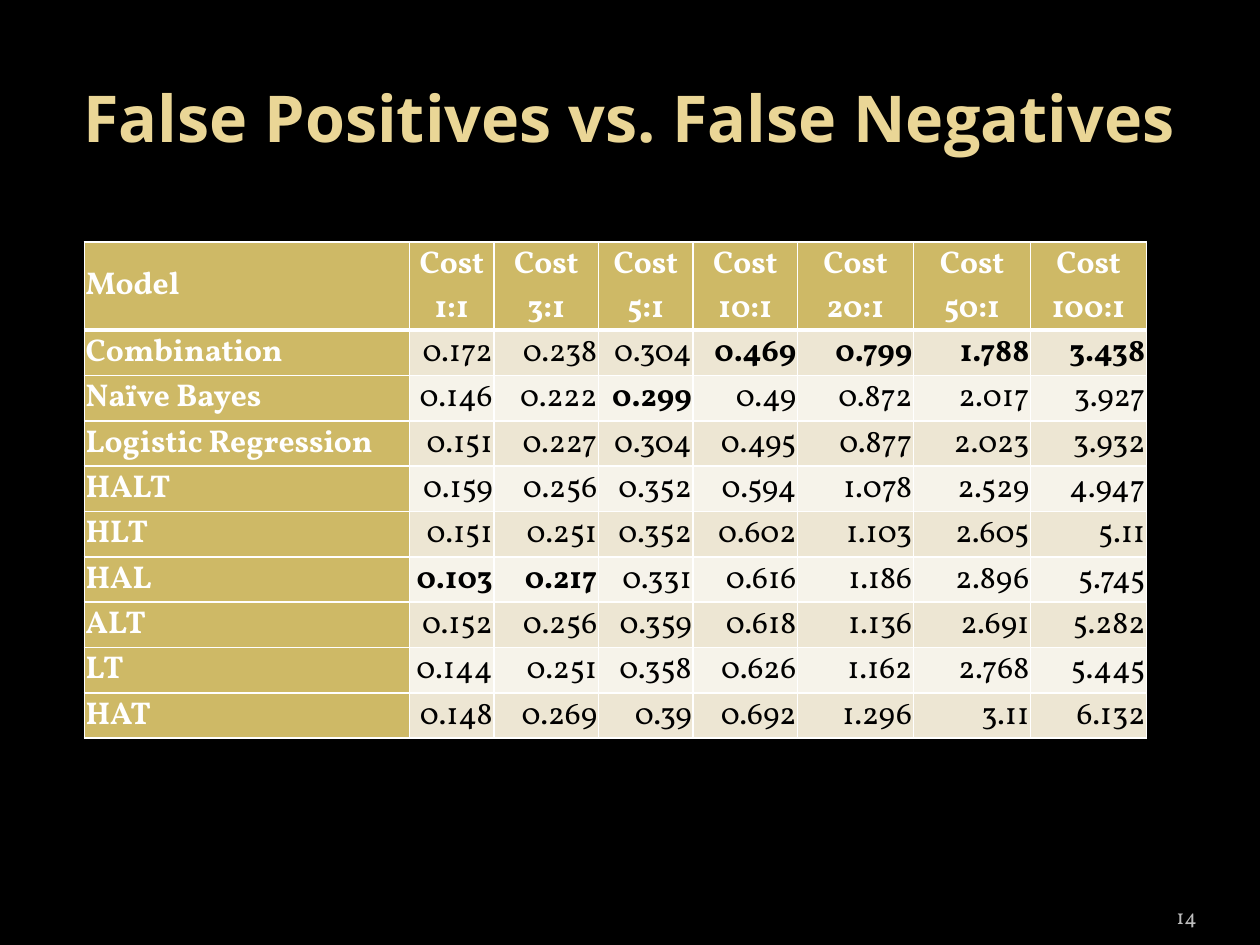
import lxml.etree
import pptx
import pptx.dml.color
import pptx.enum.text
import pptx.oxml.ns
import pptx.util

Inches, Pt = pptx.util.Inches, pptx.util.Pt
RGB = pptx.dml.color.RGBColor.from_string
ALIGN = pptx.enum.text.PP_ALIGN
ANCHOR = pptx.enum.text.MSO_ANCHOR

TITLE = "False Positives vs. False Negatives"
PAGE_NUMBER = "14"
HEADINGS = ["Model", "Cost 1:1", "Cost 3:1", "Cost 5:1", "Cost 10:1",
            "Cost 20:1", "Cost 50:1", "Cost 100:1"]
MODEL_COSTS = [
    ("Combination", 0.172, 0.238, 0.304, 0.469, 0.799, 1.788, 3.438),
    ("Naïve Bayes", 0.146, 0.222, 0.299, 0.49, 0.872, 2.017, 3.927),
    ("Logistic Regression", 0.151, 0.227, 0.304, 0.495, 0.877, 2.023, 3.932),
    ("HALT", 0.159, 0.256, 0.352, 0.594, 1.078, 2.529, 4.947),
    ("HLT", 0.151, 0.251, 0.352, 0.602, 1.103, 2.605, 5.11),
    ("HAL", 0.103, 0.217, 0.331, 0.616, 1.186, 2.896, 5.745),
    ("ALT", 0.152, 0.256, 0.359, 0.618, 1.136, 2.691, 5.282),
    ("LT", 0.144, 0.251, 0.358, 0.626, 1.162, 2.768, 5.445),
    ("HAT", 0.148, 0.269, 0.39, 0.692, 1.296, 3.11, 6.132),
]
COLUMN_WIDTHS = [2.58, 0.67, 0.83, 0.75, 0.83, 0.92, 0.93, 0.92]
ROW_HEIGHTS = [0.7] + [0.36] * len(MODEL_COSTS)

THEME = {
    "background": "000000",
    "gold": "CEB966",
    "bands": ("EDE6D3", "F6F3EA"),
    "border": "FFFFFF",
    "thin": 1,
    "thick": 3,
    "title": {"name": "Open Sans", "size": 36.9, "bold": True, "color": "EAD696"},
    "page": {"name": "Vollkorn", "size": 12, "bold": False, "color": "BDBDBD"},
    "heading": {"name": "Vollkorn", "size": 18, "bold": True, "color": "FFFFFF"},
    "cost": {"name": "Vollkorn", "size": 18, "bold": False, "color": "000000"},
}
CELL_MARGINS = {"margin_left": 0.01, "margin_top": 0.01,
                "margin_right": 0.01, "margin_bottom": 0}


def write(frame, text, style, alignment):
    paragraph = frame.paragraphs[0]
    paragraph.alignment = alignment
    run = paragraph.add_run()
    run.text = text
    formats = {"name": style["name"], "size": Pt(style["size"]), "bold": style["bold"]}
    for attribute, value in formats.items():
        setattr(run.font, attribute, value)
    run.font.color.rgb = RGB(style["color"])


def add_text(slide, box, text, style, alignment, anchor, side_margin):
    frame = slide.shapes.add_textbox(*map(Inches, box)).text_frame
    formats = {"word_wrap": True, "vertical_anchor": anchor,
               "margin_left": Inches(side_margin), "margin_right": Inches(side_margin)}
    for attribute, value in formats.items():
        setattr(frame, attribute, value)
    write(frame, text, style, alignment)


def add_borders(cell, widths):
    """Draw the cell's edges; widths maps L, R, T, B to points."""
    properties = cell._tc.get_or_add_tcPr()
    qn = pptx.oxml.ns.qn
    for side, width in widths.items():
        line = lxml.etree.SubElement(properties, qn(f"a:ln{side}"), w=str(Pt(width)))
        fill = lxml.etree.SubElement(line, qn("a:solidFill"))
        lxml.etree.SubElement(fill, qn("a:srgbClr"), val=THEME["border"])


def add_cost_table(slide):
    """Show costs by model, with the lowest cost of each column in bold."""
    rows = [HEADINGS, *MODEL_COSTS]
    table = slide.shapes.add_table(
        len(rows), len(HEADINGS), Inches(0.67), Inches(1.92),
        Inches(sum(COLUMN_WIDTHS)), Inches(sum(ROW_HEIGHTS))).table
    for column, width in zip(table.columns, COLUMN_WIDTHS):
        column.width = Inches(width)
    for row, height in zip(table.rows, ROW_HEIGHTS):
        row.height = Inches(height)
    lowest = [min(costs) for costs in list(zip(*MODEL_COSTS))[1:]]

    for r, values in enumerate(rows):
        for c, value in enumerate(values):
            cell = table.cell(r, c)
            cell.vertical_anchor = ANCHOR.MIDDLE
            for attribute, margin in CELL_MARGINS.items():
                setattr(cell, attribute, Inches(margin))
            add_borders(cell, {
                "L": THEME["thin"], "R": THEME["thin"],
                "T": THEME["thick" if r == 1 else "thin"],
                "B": THEME["thick" if r == 0 else "thin"]})
            style, color = THEME["heading"], THEME["gold"]
            alignment = ALIGN.LEFT if c == 0 else ALIGN.CENTER
            if r and c:
                style = {**THEME["cost"], "bold": value == lowest[c - 1]}
                color = THEME["bands"][(r - 1) % 2]
                alignment = ALIGN.RIGHT
            cell.fill.solid()
            cell.fill.fore_color.rgb = RGB(color)
            write(cell.text_frame, str(value), style, alignment)


def main():
    deck = pptx.Presentation()
    deck.slide_width, deck.slide_height = Inches(10), Inches(7.5)
    slide = deck.slides.add_slide(deck.slide_layouts[6])
    slide.background.fill.solid()
    slide.background.fill.fore_color.rgb = RGB(THEME["background"])
    add_text(slide, (0.5, 0.3, 9, 1.25), TITLE, THEME["title"],
             ALIGN.CENTER, ANCHOR.MIDDLE, 0.1)
    add_text(slide, (8.67, 7.02, 0.83, 0.4), PAGE_NUMBER, THEME["page"],
             ALIGN.RIGHT, ANCHOR.BOTTOM, 0)
    add_cost_table(slide)
    deck.save("out.pptx")


if __name__ == "__main__":
    main()
